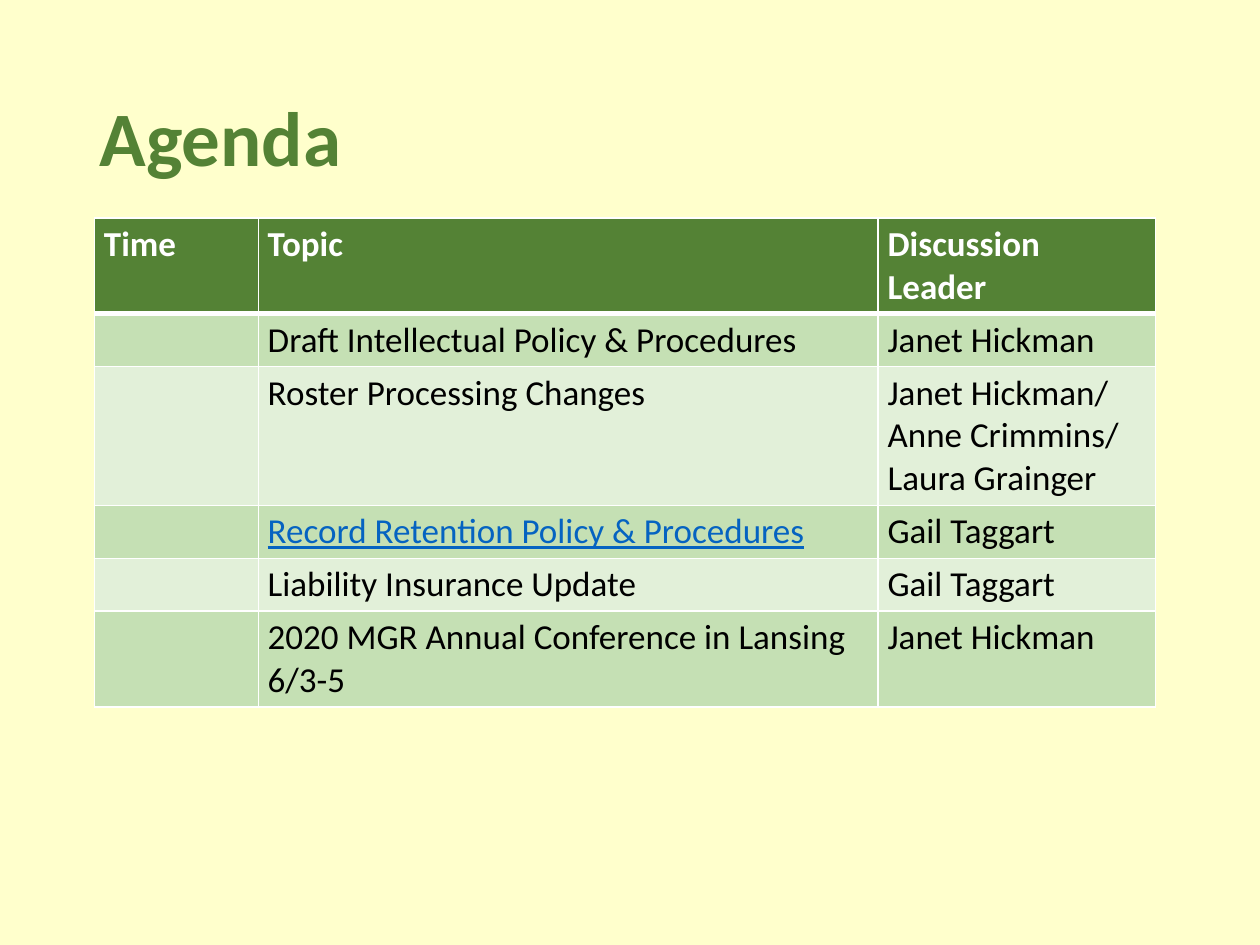
from lxml import etree
from pptx import Presentation
from pptx.dml.color import RGBColor
from pptx.enum.text import MSO_ANCHOR, PP_ALIGN
from pptx.oxml.ns import qn
from pptx.util import Inches, Pt

MIDDLE = MSO_ANCHOR.MIDDLE
LEFT = PP_ALIGN.LEFT

CREAM = RGBColor(0xFF, 0xFF, 0xCC)
GREEN = RGBColor(0x54, 0x82, 0x35)
BAND_DARK = RGBColor(0xC5, 0xE0, 0xB4)
BAND_LIGHT = RGBColor(0xE2, 0xF0, 0xD9)
WHITE = RGBColor(0xFF, 0xFF, 0xFF)
BLACK = RGBColor(0x00, 0x00, 0x00)
LINK_BLUE = RGBColor(0x05, 0x63, 0xC1)

FONT = "Calibri"
TITLE_ONLY = 5
COLUMN_WIDTHS = (1.3, 4.92, 2.2)
ROW_HEIGHT = 0.39
LINKED_TOPIC = "Record Retention Policy & Procedures"
AGENDA = [
    ("Time", "Topic", "Discussion Leader"),
    ("", "Draft Intellectual Policy & Procedures", "Janet Hickman"),
    ("", "Roster Processing Changes", "Janet Hickman/\nAnne Crimmins/\nLaura Grainger"),
    ("", LINKED_TOPIC, "Gail Taggart"),
    ("", "Liability Insurance Update", "Gail Taggart"),
    ("", "2020 MGR Annual Conference in Lansing 6/3-5", "Janet Hickman"),
]


def style_font(font, size, color, bold):
    font.name = FONT
    font.size = Pt(size)
    font.bold = bold
    font.color.rgb = color


def place_title(page, left, top, width, height):
    title = page.shapes.title
    title.left, title.top = Inches(left), Inches(top)
    title.width, title.height = Inches(width), Inches(height)
    frame = title.text_frame
    frame.text = "Agenda"
    frame.vertical_anchor = MIDDLE
    para = frame.paragraphs[0]
    para.alignment = LEFT
    para.line_spacing = 0.9
    style_font(para.font, 44, GREEN, True)


def set_borders(cell, bottom_width):
    """Draw white cell borders; they must come before the fill in the XML."""
    properties = cell._tc.get_or_add_tcPr()
    widths = {"a:lnL": 1, "a:lnR": 1, "a:lnT": 1, "a:lnB": bottom_width}
    for position, (tag, width) in enumerate(widths.items()):
        line = etree.Element(qn(tag), w=str(Pt(width)))
        fill = etree.SubElement(line, qn("a:solidFill"))
        etree.SubElement(fill, qn("a:srgbClr"), val=str(WHITE))
        properties.insert(position, line)


def fill_cell(cell, text, row_index):
    is_header = row_index == 0
    # The wider right margin keeps "Discussion Leader" on two lines
    cell.margin_left, cell.margin_right = Inches(0.075), Inches(0.1)
    cell.margin_top = cell.margin_bottom = Inches(0.04)
    cell.fill.solid()
    band = BAND_DARK if row_index % 2 else BAND_LIGHT
    cell.fill.fore_color.rgb = GREEN if is_header else band
    set_borders(cell, 3 if is_header else 1)

    cell.text = text
    for para in cell.text_frame.paragraphs:
        style_font(para.font, 20, WHITE if is_header else BLACK, is_header)
        if text == LINKED_TOPIC:
            para.font.color.rgb = LINK_BLUE
            para.font.underline = True


def place_agenda(page, left, top):
    table = page.shapes.add_table(
        len(AGENDA), len(COLUMN_WIDTHS), Inches(left), Inches(top),
        Inches(sum(COLUMN_WIDTHS)), Inches(ROW_HEIGHT * len(AGENDA))).table
    for column, width in zip(table.columns, COLUMN_WIDTHS):
        column.width = Inches(width)
    for row_index, entries in enumerate(AGENDA):
        for column_index, text in enumerate(entries):
            fill_cell(table.cell(row_index, column_index), text, row_index)


def main():
    deck = Presentation()
    deck.slide_width, deck.slide_height = Inches(10), Inches(7.5)
    page = deck.slides.add_slide(deck.slide_layouts[TITLE_ONLY])
    page.background.fill.solid()
    page.background.fill.fore_color.rgb = CREAM
    place_title(page, 0.69, 0.4, 8.62, 1.45)
    place_agenda(page, 0.75, 1.73)
    deck.save("out.pptx")


if __name__ == "__main__":
    main()
